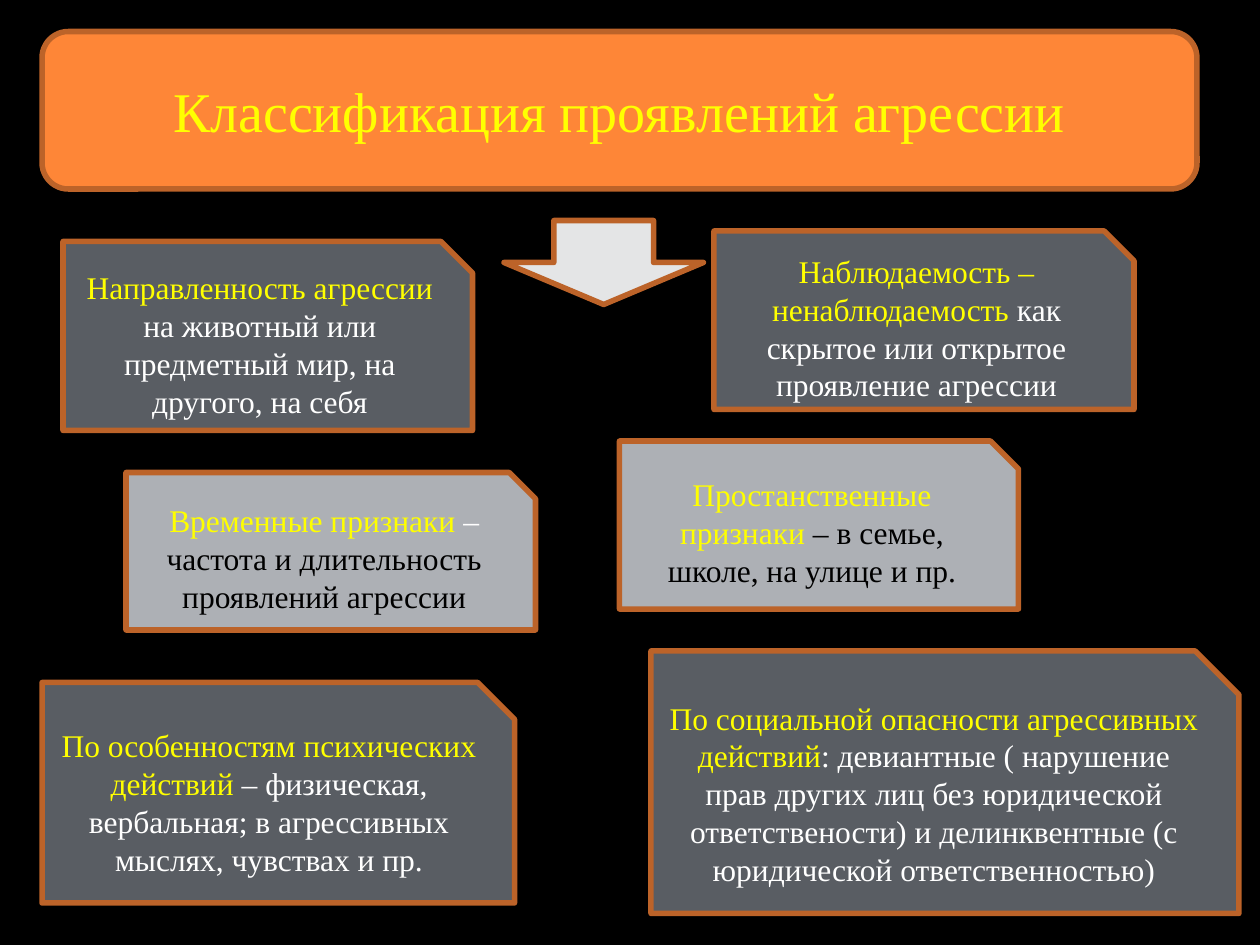
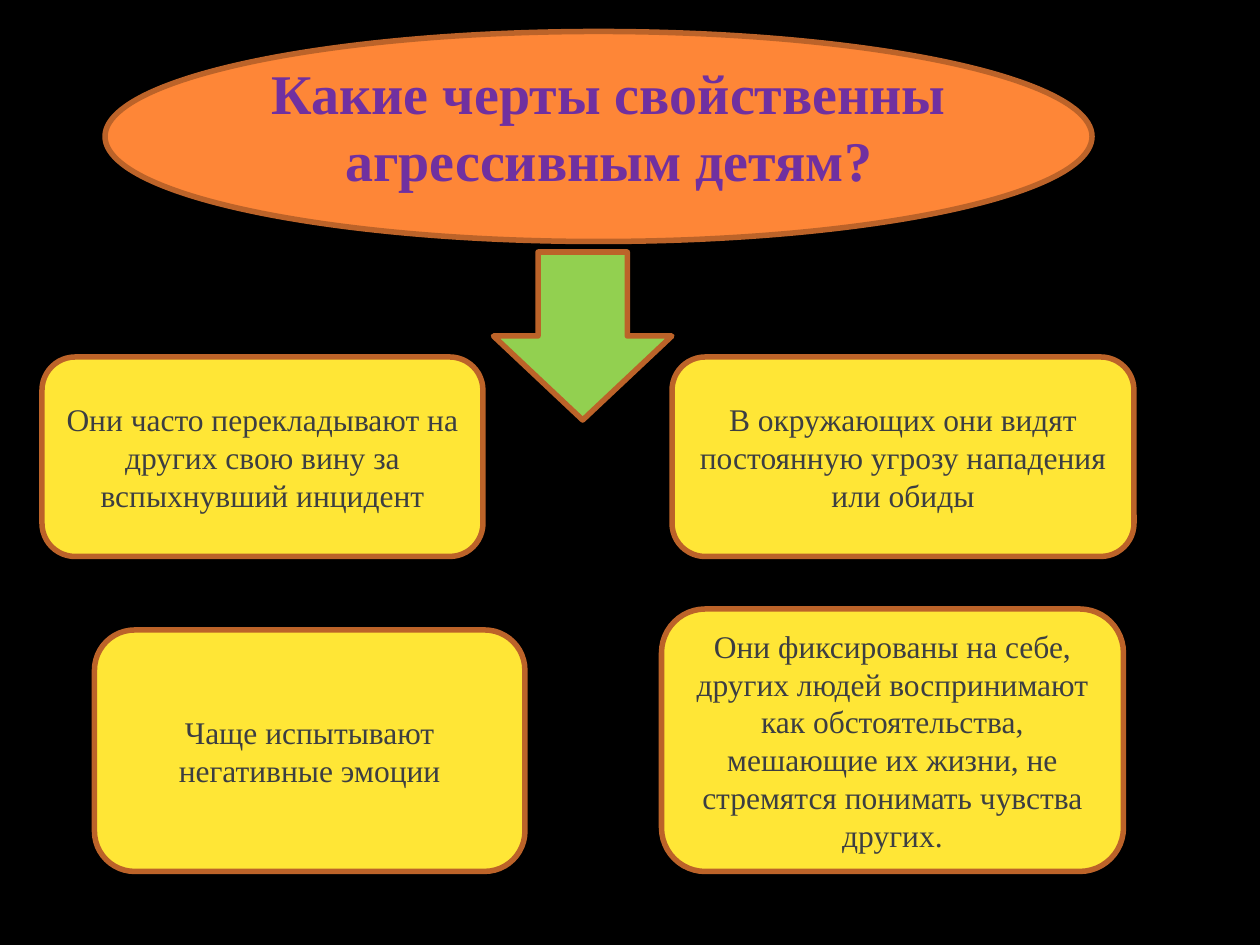
import pptx
import pptx.util
import pptx.dml.color
import pptx.enum.shapes
import pptx.enum.text

RGBColor = pptx.dml.color.RGBColor
Preset = pptx.enum.shapes.MSO_SHAPE

BLACK = RGBColor(0x00, 0x00, 0x00)
WHITE = RGBColor(0xFF, 0xFF, 0xFF)
ORANGE = RGBColor(0xFE, 0x86, 0x37)
BROWN = RGBColor(0xBC, 0x63, 0x29)
YELLOW = RGBColor(0xFF, 0xFF, 0x00)
PURPLE = RGBColor(0x70, 0x30, 0xA0)
DARK_GREY = RGBColor(0x59, 0x5D, 0x63)
MID_GREY = RGBColor(0xAD, 0xB0, 0xB5)
PALE_GREY = RGBColor(0xE4, 0xE5, 0xE6)
LEMON = RGBColor(0xFF, 0xE6, 0x36)
GREEN = RGBColor(0x92, 0xD0, 0x50)
INK = RGBColor(0x3C, 0x3E, 0x42)

FONT = "Times New Roman"
TITLE_SIZE, BODY_SIZE = 32, 18
LINE_WIDTH = pptx.util.Pt(3.15)

# The slide is a grid of 120 columns by 90 rows
SLIDE_WIDTH, SLIDE_HEIGHT = pptx.util.Inches(10), pptx.util.Inches(7.5)
COLUMN, ROW = SLIDE_WIDTH // 120, SLIDE_HEIGHT // 90

# Boxes are (column, row, columns wide, rows high)
CLASSIFICATION_CARDS = [
    ((6, 23, 39, 18), DARK_GREY,
     [("Направленность агрессии ", YELLOW),
      ("на животный или предметный мир, на другого, на себя", WHITE)]),
    ((68, 22, 40, 17), DARK_GREY,
     [("Наблюдаемость – ненаблюдаемость", YELLOW),
      (" как скрытое или открытое проявление агрессии", WHITE)]),
    ((12, 45, 39, 15), MID_GREY,
     [("Временные признаки ", YELLOW), ("– ", WHITE),
      ("частота и длительность проявлений агрессии", BLACK)]),
    ((59, 42, 38, 16), MID_GREY,
     [("Простанственные признаки ", YELLOW),
      ("– в семье, школе, на улице и пр.", BLACK)]),
    ((4, 65, 45, 21), DARK_GREY,
     [("По особенностям психических действий", YELLOW),
      (" – физическая, вербальная; в агрессивных мыслях, чувствах и пр.", WHITE)]),
    ((62, 62, 56, 25), DARK_GREY,
     [("По социальной опасности агрессивных действий", YELLOW),
      (": девиантные ( нарушение прав других лиц без юридической ответствености) "
       "и делинквентные (с юридической ответственностью)", WHITE)]),
]

TRAIT_CARDS = [
    ((4, 34, 42, 19), "Они часто перекладывают на других свою вину за вспыхнувший инцидент"),
    ((64, 34, 44, 19), "В окружающих они видят постоянную угрозу нападения или обиды"),
    ((9, 60, 41, 23), "Чаще испытывают негативные эмоции"),
    ((63, 58, 44, 25), "Они фиксированы на себе, других людей воспринимают как обстоятельства, "
                       "мешающие их жизни, не стремятся понимать чувства других."),
]


def grid_box(box):
    column, row, columns, rows = box
    return column * COLUMN, row * ROW, columns * COLUMN, rows * ROW


def write_text(shape, runs, size=BODY_SIZE, bold=False):
    """Fill a shape with one centred paragraph of (text, colour) runs."""
    frame = shape.text_frame
    frame.word_wrap = True
    frame.auto_size = pptx.enum.text.MSO_AUTO_SIZE.NONE
    frame.vertical_anchor = pptx.enum.text.MSO_ANCHOR.MIDDLE
    paragraph = frame.paragraphs[0]
    paragraph.alignment = pptx.enum.text.PP_ALIGN.CENTER
    for text, color in runs:
        run = paragraph.add_run()
        run.text = text
        run.font.name = FONT
        run.font.size = pptx.util.Pt(size)
        run.font.bold = bold
        run.font.color.rgb = color


def add_panel(slide, preset, box, fill):
    """Outlined preset shape, the common look of every part."""
    shape = slide.shapes.add_shape(preset, *grid_box(box))
    shape.shadow.inherit = False
    shape.fill.solid()
    shape.fill.fore_color.rgb = fill
    shape.line.color.rgb = BROWN
    shape.line.width = LINE_WIDTH
    return shape


def add_header(slide, preset, box, title_box, text, color, bold=False):
    """Orange panel with the slide title in front of it."""
    panel = add_panel(slide, preset, box, ORANGE)
    title = slide.shapes.title
    title.left, title.top, title.width, title.height = grid_box(title_box)
    write_text(title, [(text, color)], size=TITLE_SIZE, bold=bold)
    panel._element.addnext(title._element)


def add_card(slide, preset, box, fill, runs):
    write_text(add_panel(slide, preset, box, fill), runs)


def add_slide(presentation):
    slide = presentation.slides.add_slide(presentation.slide_layouts.get_by_name("Title Only"))
    slide.background.fill.solid()
    slide.background.fill.fore_color.rgb = BLACK
    return slide


def build_classification(presentation):
    slide = add_slide(presentation)
    header_box = (4, 3, 110, 15)
    add_header(slide, Preset.ROUNDED_RECTANGLE, header_box, header_box,
               "Классификация проявлений агрессии", YELLOW)
    for box, fill, runs in CLASSIFICATION_CARDS:
        add_card(slide, Preset.SNIP_1_RECTANGLE, box, fill, runs)
    add_panel(slide, Preset.DOWN_ARROW, (48, 21, 19, 8), PALE_GREY)


def build_traits(presentation):
    slide = add_slide(presentation)
    add_header(slide, Preset.OVAL, (10, 3, 94, 20), (18, 5, 80, 14),
               "Какие черты свойственны агрессивным детям?", PURPLE, bold=True)
    for box, text in TRAIT_CARDS:
        add_card(slide, Preset.ROUNDED_RECTANGLE, box, LEMON, [(text, INK)])
    add_panel(slide, Preset.DOWN_ARROW, (47, 24, 17, 16), GREEN)


def main():
    presentation = pptx.Presentation()
    presentation.slide_width = SLIDE_WIDTH
    presentation.slide_height = SLIDE_HEIGHT
    build_classification(presentation)
    build_traits(presentation)
    presentation.save("out.pptx")


if __name__ == "__main__":
    main()
